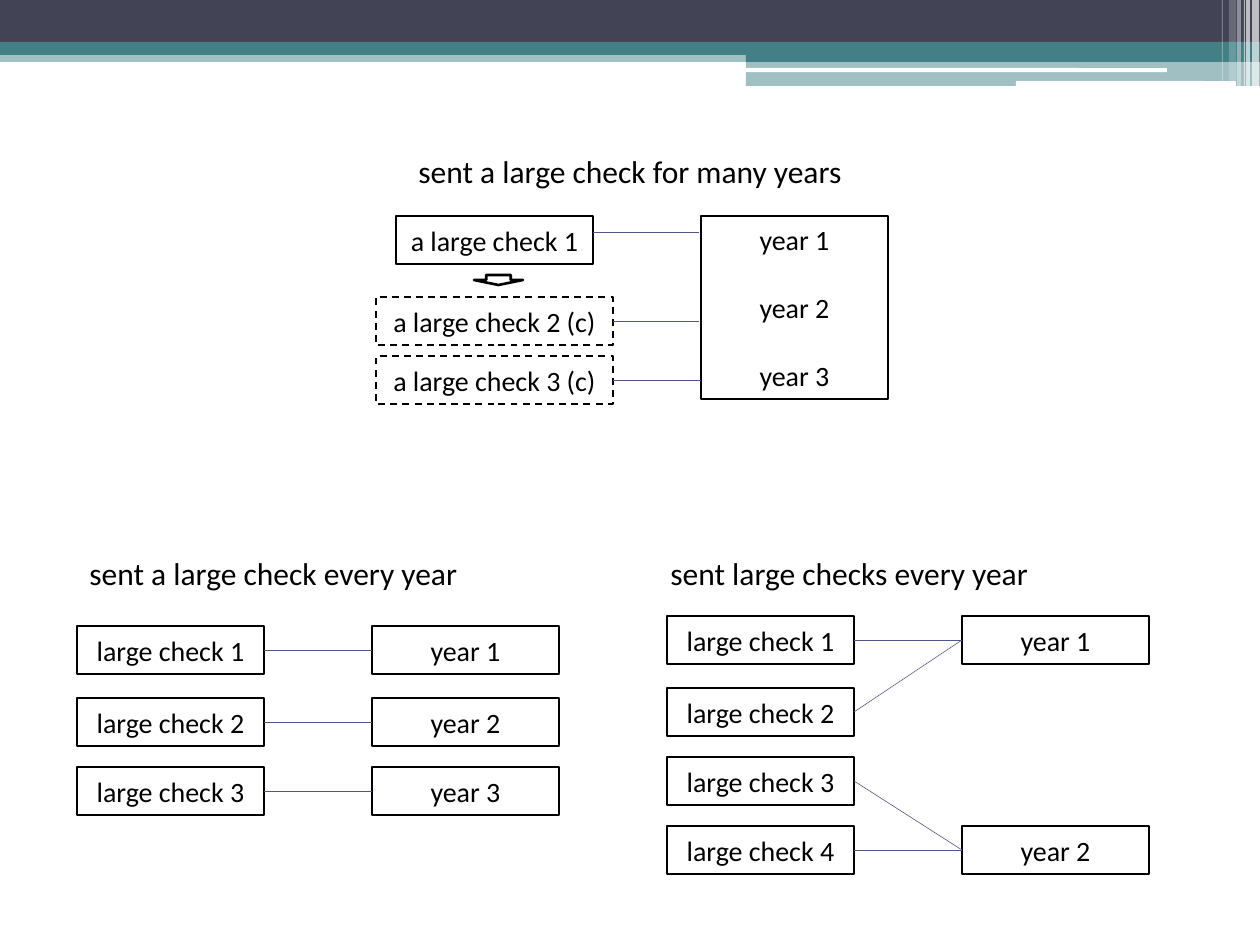
from typing import NamedTuple, Optional

from lxml.etree import SubElement
from pptx import Presentation
from pptx.dml.color import RGBColor
from pptx.enum.dml import MSO_LINE
from pptx.enum.shapes import MSO_CONNECTOR, MSO_SHAPE
from pptx.enum.text import MSO_ANCHOR, PP_ALIGN
from pptx.oxml.ns import qn
from pptx.util import Emu, Pt

PX = 914400 / 126
COLORS = {"ink": "000000", "navy": "424456", "teal": "438086", "white": "FFFFFF", "link": "53548A"}
BOX_W, BOX_H = 187, 48


class Band(NamedTuple):
    x: int
    y: int
    w: int
    h: int
    color: str
    alpha: int = 100
    rounded: bool = False


class Box(NamedTuple):
    x: int
    y: int
    lines: tuple[str, ...]
    w: int = BOX_W
    h: int = BOX_H
    dashed: bool = False


class Title(NamedTuple):
    x: int
    y: int
    text: str


class Link(NamedTuple):
    x1: int
    y1: int
    x2: int
    y2: int


class Panel(NamedTuple):
    x: int
    checks: tuple[int, ...]
    years: tuple[int, ...]
    pairs: tuple[tuple[int, int], ...]


BANDS = [
    Band(0, 50, 1260, 12, "teal", 50),
    Band(0, 0, 1260, 42, "navy"),
    Band(0, 42, 1260, 13, "teal"),
    Band(746, 49, 514, 13, "teal"),
    Band(746, 61, 514, 25, "teal", 50),
    Band(745, 68, 422, 4, "white", rounded=True),
    Band(1016, 81, 220, 5, "white", rounded=True),
    Band(1252, 0, 7, 86, "white", 65),
    Band(1246, 0, 4, 86, "white", 65),
    Band(1244, 0, 1, 86, "white", 60),
    Band(1237, 0, 4, 86, "white", 40),
    Band(1229, 0, 7, 81, "white", 20),
    Band(1222, 0, 1, 81, "white", 30),
]

TITLES = [
    Title(406, 146, "sent a large check for many years"),
    Title(77, 548, "sent a large check every year"),
    Title(658, 548, "sent large checks every year"),
]

TOP_BOXES = [
    Box(396, 216, ("a large check 1",), w=197),
    Box(376, 297, ("a large check 2 (c)",), w=237, dashed=True),
    Box(376, 356, ("a large check 3 (c)",), w=237, dashed=True),
    Box(701, 216, ("year 1", "year 2", "year 3"), h=183),
]

TOP_LINKS = [Link(593, 232, 699, 232), Link(613, 321, 699, 321), Link(613, 380, 701, 380)]

PANELS = [
    Panel(77, (626, 698, 767), (626, 698, 767), ((0, 0), (1, 1), (2, 2))),
    Panel(667, (616, 688, 757, 826), (616, 826), ((0, 0), (1, 0), (2, 1), (3, 1))),
]
YEAR_OFFSET = 295


def px(n: int) -> Emu:
    return Emu(round(n * PX))


def rgb(name: str) -> RGBColor:
    return RGBColor.from_string(COLORS[name])


def write(tf, *lines: str, size: int = 16, align=PP_ALIGN.CENTER,
          anchor=MSO_ANCHOR.MIDDLE, gap: float = 19.5) -> None:
    tf.word_wrap = True
    tf.vertical_anchor = anchor
    for i, line in enumerate(lines):
        p = tf.add_paragraph() if i else tf.paragraphs[0]
        p.alignment = align
        if i:
            p.space_before = Pt(gap)
        r = p.add_run()
        r.text = line
        r.font.name = "Calibri"
        r.font.size = Pt(size)
        r.font.color.rgb = rgb("ink")


def add_shape(s, kind, x: int, y: int, w: int, h: int):
    sp = s.shapes.add_shape(kind, px(x), px(y), px(w), px(h))
    sp.shadow.inherit = False
    return sp


def outline(sp, width: float) -> None:
    sp.fill.background()
    sp.line.color.rgb = rgb("ink")
    sp.line.width = Pt(width)


def draw_band(s, b: Band) -> None:
    kind = MSO_SHAPE.ROUNDED_RECTANGLE if b.rounded else MSO_SHAPE.RECTANGLE
    sp = add_shape(s, kind, b.x, b.y, b.w, b.h)
    sp.line.fill.background()
    sp.fill.solid()
    sp.fill.fore_color.rgb = rgb(b.color)
    if b.alpha < 100:
        clr = sp.fill._xPr.find(qn("a:solidFill"))[0]
        SubElement(clr, qn("a:alpha")).set("val", str(b.alpha * 1000))


def draw_title(s, t: Title) -> None:
    tb = s.shapes.add_textbox(px(t.x), px(t.y), px(493), px(51))
    write(tb.text_frame, t.text, size=18, align=PP_ALIGN.LEFT, anchor=MSO_ANCHOR.TOP)


def draw_box(s, b: Box) -> None:
    sp = add_shape(s, MSO_SHAPE.RECTANGLE, b.x, b.y, b.w, b.h)
    outline(sp, 1)
    if b.dashed:
        sp.line.dash_style = MSO_LINE.DASH
    write(sp.text_frame, *b.lines)


def draw_link(s, k: Link) -> None:
    c = s.shapes.add_connector(MSO_CONNECTOR.STRAIGHT, px(k.x1), px(k.y1), px(k.x2), px(k.y2))
    c.line.color.rgb = rgb("link")
    c.line.width = Pt(0.35)
    SubElement(c._element.spPr, qn("a:effectLst"))


def draw_column(s, x: int, rows: tuple[int, ...], label: str) -> None:
    for n, y in enumerate(rows, 1):
        draw_box(s, Box(x, y, (f"{label} {n}",)))


def draw_panel(s, p: Panel) -> None:
    year_x = p.x + YEAR_OFFSET
    draw_column(s, p.x, p.checks, "large check")
    draw_column(s, year_x, p.years, "year")
    for check, year in p.pairs:
        draw_link(s, Link(p.x + BOX_W, p.checks[check] + BOX_H // 2,
                          year_x, p.years[year] + BOX_H // 2))


def main() -> None:
    prs = Presentation()
    prs.slide_width, prs.slide_height = px(1260), px(945)
    s = prs.slides.add_slide(prs.slide_layouts[6])
    for band in BANDS:
        draw_band(s, band)
    for title in TITLES:
        draw_title(s, title)
    for box in TOP_BOXES:
        draw_box(s, box)
    for link in TOP_LINKS:
        draw_link(s, link)
    outline(add_shape(s, MSO_SHAPE.DOWN_ARROW, 474, 275, 49, 10), 1.5)
    for panel in PANELS:
        draw_panel(s, panel)
    prs.save("out.pptx")


if __name__ == "__main__":
    main()
